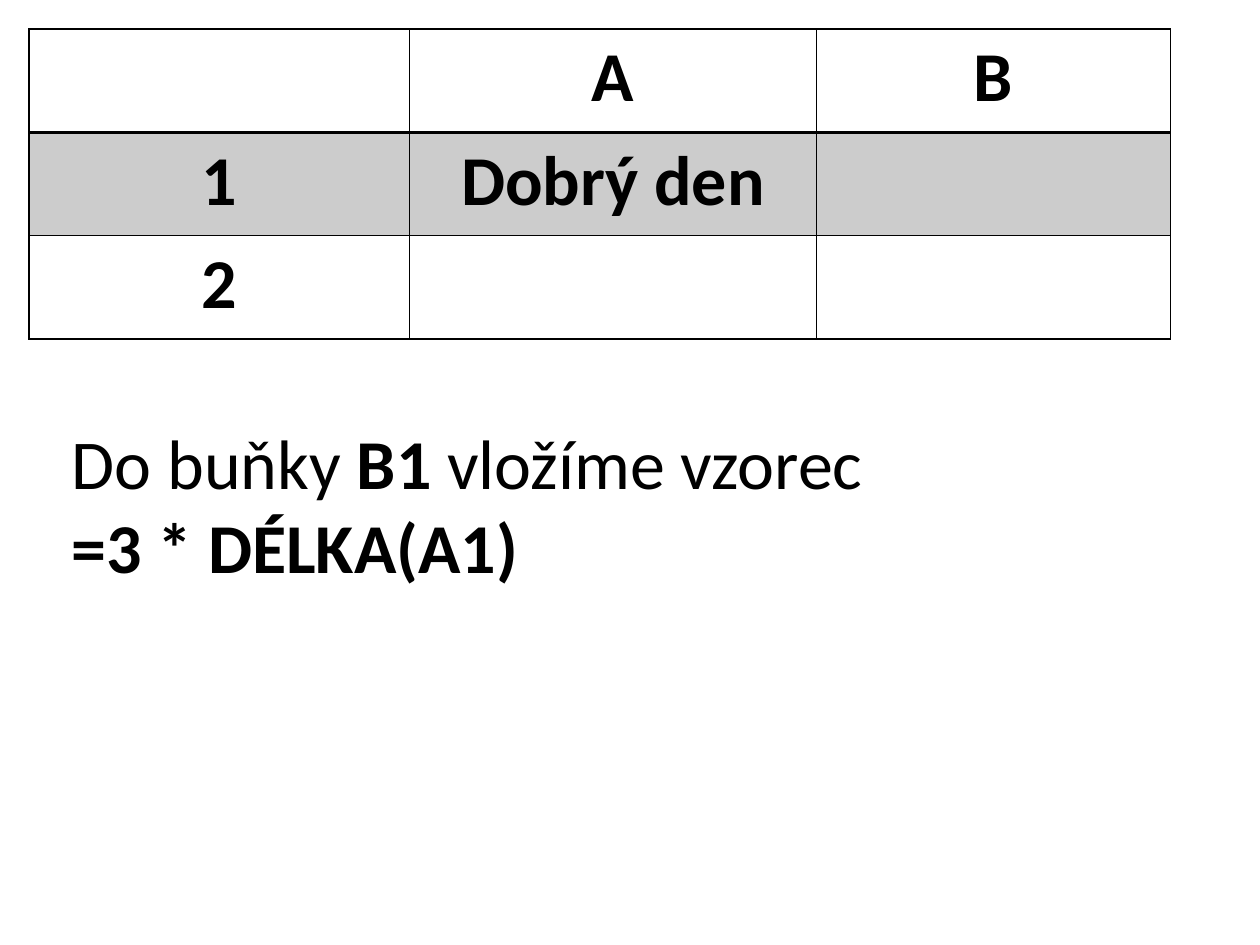
from dataclasses import dataclass

from lxml import etree
from pptx import Presentation
from pptx.dml.color import RGBColor
from pptx.enum.text import MSO_AUTO_SIZE, PP_ALIGN
from pptx.oxml.ns import qn
from pptx.util import Inches, Pt

CENTER = PP_ALIGN.CENTER
GROW = MSO_AUTO_SIZE.SHAPE_TO_FIT_TEXT


@dataclass(frozen=True)
class Theme:
    font: str = "Calibri"
    size: int = 40
    ink: str = "000000"
    band: int = 20  # opacity of the shaded row, percent
    thin: int = 1
    thick: int = 2


THEME = Theme()

COLS = (3.02, 3.23, 2.81)
ROW = 0.82
CELLS = (
    ("", "A", "B"),
    ("1", "Dobrý den", ""),
    ("2", "", ""),
)
# Each line is a list of (text, bold) runs
LINES = (
    (("Do buňky ", False), ("B1", True), (" vložíme vzorec", False)),
    (("=3 * DÉLKA(A1)", True),),
)


def set_font(font, bold=None):
    font.name = THEME.font
    font.size = Pt(THEME.size)
    font.color.rgb = RGBColor.from_string(THEME.ink)
    font.bold = bold


def add_edge(props, side, width):
    line = etree.SubElement(props, qn(f"a:ln{side}"), w=str(Pt(width)))
    fill = etree.SubElement(line, qn("a:solidFill"))
    etree.SubElement(fill, qn("a:srgbClr"), val=THEME.ink)


def style_cell(cell, row):
    props = cell._tc.get_or_add_tcPr()
    # A thick rule parts the header from the body
    widths = {side: THEME.thin for side in "LRTB"}
    if row < 2:
        widths["B" if row == 0 else "T"] = THEME.thick
    for side, width in widths.items():
        add_edge(props, side, width)
    if row == 1:
        cell.fill.solid()
        cell.fill.fore_color.rgb = RGBColor.from_string(THEME.ink)
        color = props.find(qn("a:solidFill")).find(qn("a:srgbClr"))
        etree.SubElement(color, qn("a:alpha"), val=str(THEME.band * 1000))
    else:
        cell.fill.background()


def add_grid(slide, left, top):
    frame = slide.shapes.add_table(
        len(CELLS), len(COLS), Inches(left), Inches(top),
        Inches(sum(COLS)), Inches(ROW * len(CELLS)))
    table = frame.table
    table.first_row = table.horz_banding = False
    for col, width in zip(table.columns, COLS):
        col.width = Inches(width)
    for r, texts in enumerate(CELLS):
        table.rows[r].height = Inches(ROW)
        for c, text in enumerate(texts):
            cell = table.cell(r, c)
            style_cell(cell, r)
            cell.text = text
            para = cell.text_frame.paragraphs[0]
            para.alignment = CENTER
            set_font(para.font, True)


def add_note(slide, left, top, width, height):
    box = slide.shapes.add_textbox(
        Inches(left), Inches(top), Inches(width), Inches(height))
    frame = box.text_frame
    frame.word_wrap = True
    frame.auto_size = GROW
    for i, runs in enumerate(LINES):
        para = frame.add_paragraph() if i else frame.paragraphs[0]
        set_font(para.font)
        for text, bold in runs:
            run = para.add_run()
            run.text = text
            run.font.bold = bold


def main():
    deck = Presentation()
    deck.slide_width, deck.slide_height = Inches(10), Inches(7.5)
    slide = deck.slides.add_slide(deck.slide_layouts[6])
    # Sheet with column letters and row numbers
    add_grid(slide, 0.23, 0.23)
    # Formula below the sheet
    add_note(slide, 0.47, 3.28, 8.91, 1.45)
    deck.save("out.pptx")


if __name__ == "__main__":
    main()
